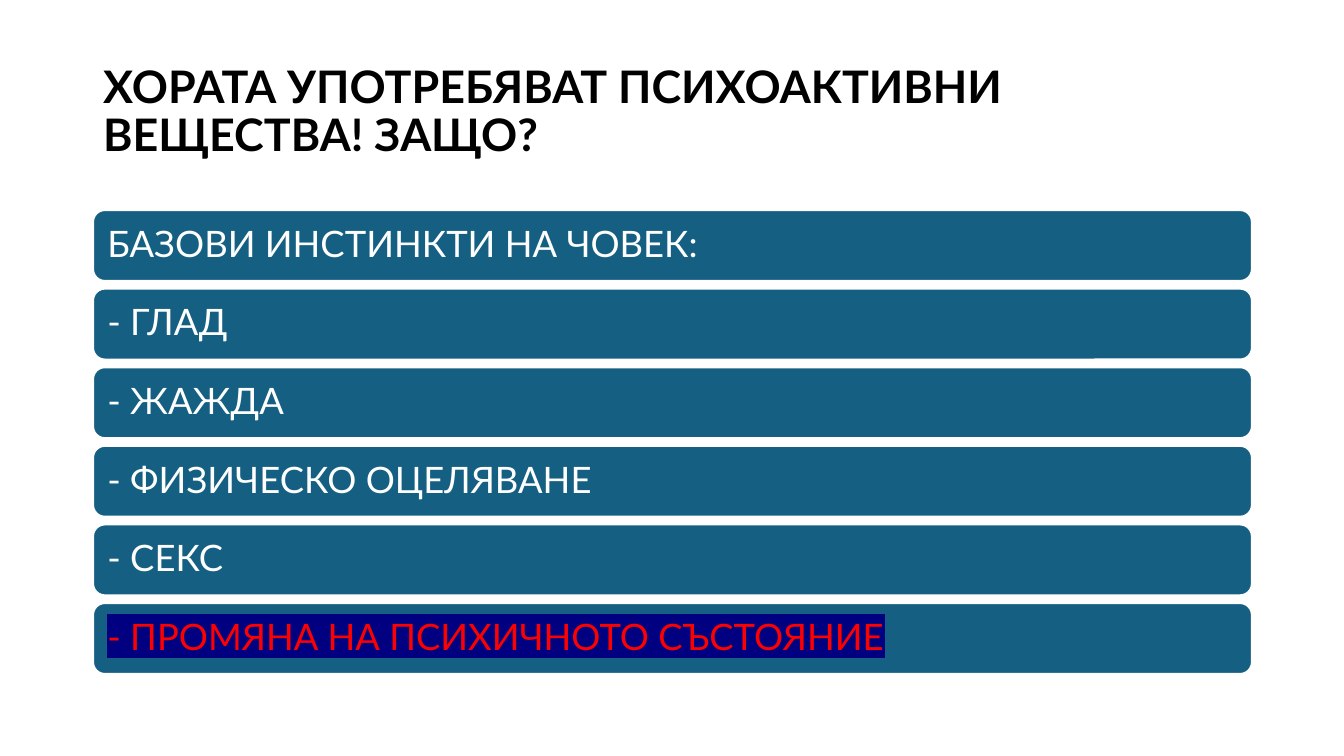
from lxml import etree
from pptx import Presentation
from pptx import util as u
from pptx.dml import color
from pptx.enum import shapes, text
from pptx.oxml import ns

PX_PER_INCH = 100.8
FONT = "Lato"
TITLE = "ХОРАТА УПОТРЕБЯВАТ ПСИХОАКТИВНИ ВЕЩЕСТВА! ЗАЩО?"
INSTINCTS = [
    ("БАЗОВИ ИНСТИНКТИ НА ЧОВЕК:", "FFFFFF", None),
    ("- ГЛАД", "FFFFFF", None),
    ("- ЖАЖДА", "FFFFFF", None),
    ("- ФИЗИЧЕСКО ОЦЕЛЯВАНЕ", "FFFFFF", None),
    ("- СЕКС", "FFFFFF", None),
    ("- ПРОМЯНА НА ПСИХИЧНОТО СЪСТОЯНИЕ", "FF0000", "000080"),
]
LEFT, WIDTH = 93, 1159
LIST_TOP, LIST_HEIGHT, BAR_HEIGHT = 210, 464, 71
BAR_INSET = 11


def px(length):
    return u.Inches(length / PX_PER_INCH)


def rgb(hex_code):
    return color.RGBColor.from_string(hex_code)


def add_highlight(run, hex_code):
    highlight = etree.Element(ns.qn("a:highlight"))
    etree.SubElement(highlight, ns.qn("a:srgbClr"), val=hex_code)
    run.font.fill._xPr.find(ns.qn("a:solidFill")).addnext(highlight)


def write_line(frame, words, size, hex_code, bold=False):
    frame.word_wrap = True
    frame.auto_size = text.MSO_AUTO_SIZE.NONE
    frame.vertical_anchor = text.MSO_ANCHOR.MIDDLE
    paragraph = frame.paragraphs[0]
    paragraph.alignment = text.PP_ALIGN.LEFT
    paragraph.line_spacing = 0.9
    run = paragraph.add_run()
    run.text = words
    run.font.name = FONT
    run.font.size = u.Pt(size)
    run.font.bold = bold
    run.font.color.rgb = rgb(hex_code)
    return run


def set_title(slide):
    title = slide.shapes.title
    title.left, title.top = px(LEFT), px(40)
    title.width, title.height = px(WIDTH), px(146)
    write_line(title.text_frame, TITLE, 32, "000000", bold=True)


def add_bar(slide, top, words, hex_code, highlight):
    bar = slide.shapes.add_shape(
        shapes.MSO_SHAPE.ROUNDED_RECTANGLE,
        px(LEFT), px(top), px(WIDTH), px(BAR_HEIGHT))
    bar.shadow.inherit = False
    bar.fill.solid()
    bar.fill.fore_color.rgb = rgb("156082")
    bar.line.color.rgb = rgb("FFFFFF")
    bar.line.width = u.Pt(1.5)
    frame = bar.text_frame
    frame.margin_left = frame.margin_right = px(BAR_INSET)
    frame.margin_top = frame.margin_bottom = px(BAR_INSET)
    run = write_line(frame, words, 26, hex_code)
    if highlight:
        add_highlight(run, highlight)


def main():
    presentation = Presentation()
    presentation.slide_width = px(1344)
    presentation.slide_height = px(756)
    slide = presentation.slides.add_slide(presentation.slide_layouts.get_by_name("Title Only"))
    set_title(slide)
    pitch = (LIST_HEIGHT - BAR_HEIGHT) / (len(INSTINCTS) - 1)
    for index, (words, hex_code, highlight) in enumerate(INSTINCTS):
        add_bar(slide, LIST_TOP + index * pitch, words, hex_code, highlight)
    presentation.save("out.pptx")


if __name__ == "__main__":
    main()
